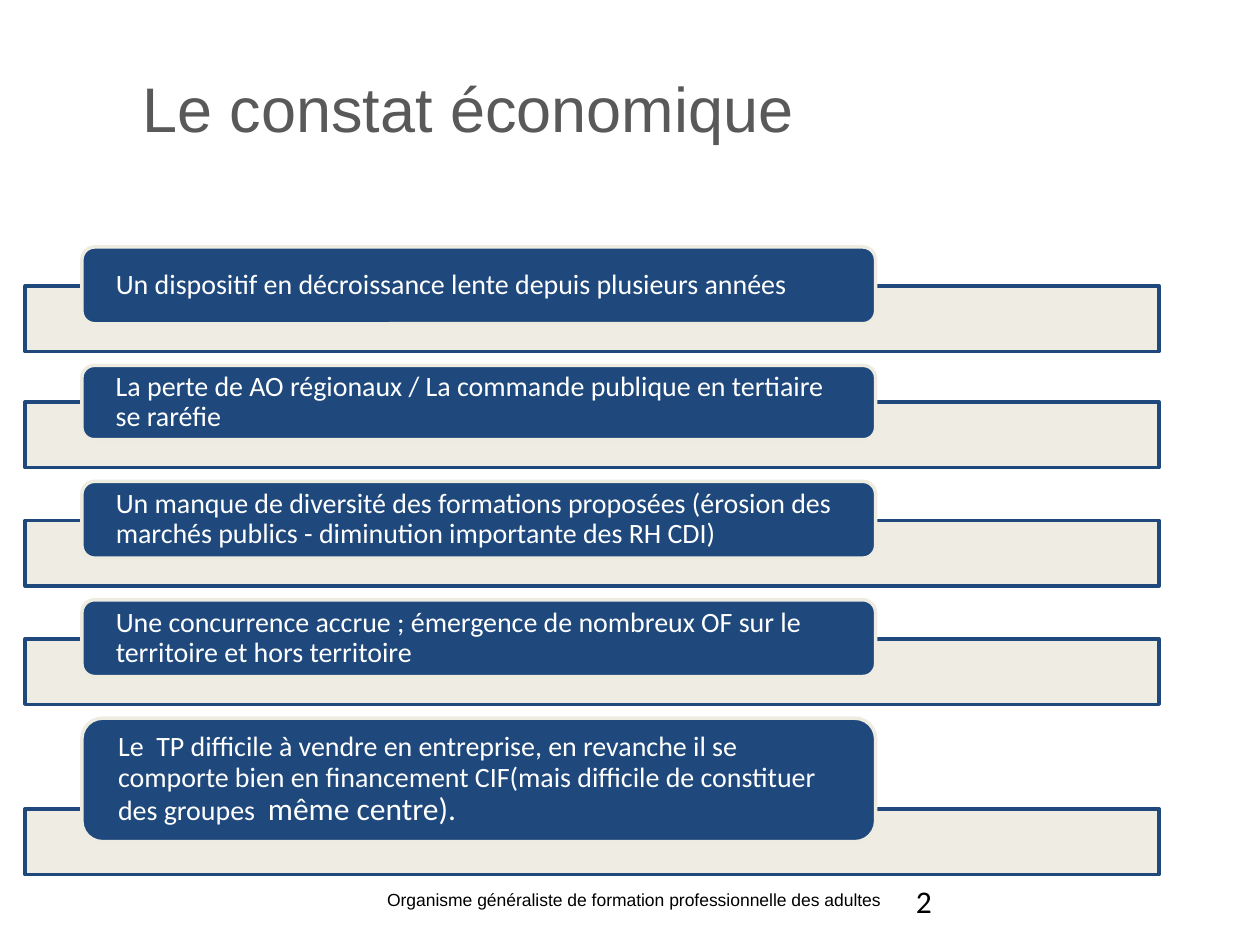
"""Build the slide on the economic findings, laid out on a grid of 100 columns by 75 rows."""
from dataclasses import dataclass

from lxml.etree import SubElement
from pptx import Presentation
from pptx.dml.color import RGBColor
from pptx.enum.shapes import MSO_SHAPE
from pptx.enum.text import MSO_ANCHOR, PP_ALIGN
from pptx.oxml.ns import qn
from pptx.util import Inches, Pt

NAVY = RGBColor(0x1F, 0x49, 0x7D)
CREAM = RGBColor(0xEE, 0xEC, 0xE1)
WHITE = RGBColor(0xFF, 0xFF, 0xFF)
GREY = RGBColor(0x59, 0x59, 0x59)
BLACK = RGBColor(0, 0, 0)

SLIDE_W, SLIDE_H = Inches(10), Inches(7.5)
COL, ROW = SLIDE_W / 100, SLIDE_H / 75
FIRST_ROW, BAR_ROWS, GAP_ROWS = 19.6, 5.2, 1.1


@dataclass(frozen=True)
class Span:
    text: str
    size: int = 16


@dataclass(frozen=True)
class Finding:
    spans: tuple[Span, ...]
    rows: float = 6.1
    overlap: float = 3


FINDINGS = (
    Finding((Span("Un dispositif en décroissance lente depuis plusieurs années"),)),
    Finding((Span("La perte de AO régionaux / La commande publique en tertiaire se raréfie"),),
            rows=5.9),
    Finding((Span("Un manque de diversité des formations proposées (érosion des marchés publics"
                  " - diminution importante des RH CDI)"),)),
    Finding((Span("Une concurrence accrue ; émergence de nombreux OF sur le territoire"
                  " et hors territoire"),)),
    Finding((Span("Le  TP difficile à vendre en entreprise, en revanche il se comporte bien en"
                  " financement CIF(mais difficile de constituer des groupes  "),
             Span("même centre).", 18)), rows=9.8, overlap=2.6),
)


def grid(col: float, row: float, cols: float, rows: float) -> tuple[int, int, int, int]:
    """Turn grid units into left, top, width and height."""
    return round(col * COL), round(row * ROW), round(cols * COL), round(rows * ROW)


def add_run(p, text: str, size: int, font: str, color: RGBColor) -> None:
    """Add one formatted run to a paragraph."""
    r = p.add_run()
    r.text = text
    r.font.size, r.font.name = Pt(size), font
    r.font.color.rgb = color


def add_panel(slide, kind: MSO_SHAPE, box: tuple, fill: RGBColor, line: RGBColor):
    """Add a flat outlined shape."""
    sp = slide.shapes.add_shape(kind, *box)
    sp.shadow.inherit = False
    sp.fill.solid()
    sp.fill.fore_color.rgb = fill
    sp.line.color.rgb = line
    sp.line.width = Pt(2)
    return sp


def add_finding(slide, finding: Finding, row: float) -> float:
    """Draw a bar with its label and return the row of the next label."""
    bar_row = row + finding.rows - finding.overlap
    bar = add_panel(slide, MSO_SHAPE.RECTANGLE, grid(2, bar_row, 90, BAR_ROWS), CREAM, NAVY)
    color = bar.fill._xPr.find(qn("a:solidFill"))[0]
    SubElement(color, qn("a:alpha"), val="90000")

    label = add_panel(slide, MSO_SHAPE.ROUNDED_RECTANGLE,
                      grid(6.5, row, 63, finding.rows), NAVY, CREAM)
    tf = label.text_frame
    tf.word_wrap = True
    tf.vertical_anchor = MSO_ANCHOR.MIDDLE
    tf.margin_left = tf.margin_right = Inches(0.24)
    tf.margin_top = tf.margin_bottom = 0
    p = tf.paragraphs[0]
    p.alignment = PP_ALIGN.LEFT
    p.line_spacing = 0.9
    for span in finding.spans:
        add_run(p, span.text, span.size, "Calibri", WHITE)
    return bar_row + BAR_ROWS + GAP_ROWS


def add_note(slide, box: tuple, text: str, size: int, font: str, align: PP_ALIGN) -> None:
    """Add a line of text at the foot of the slide."""
    tf = slide.shapes.add_textbox(*box).text_frame
    tf.word_wrap = True
    p = tf.paragraphs[0]
    p.alignment = align
    add_run(p, text, size, font, BLACK)


def add_title(slide, text: str) -> None:
    """Place and format the title placeholder."""
    sp = slide.shapes.title
    sp.left, sp.top, sp.width, sp.height = grid(3.9, 4.5, 66.5, 8)
    tf = sp.text_frame
    tf.vertical_anchor = MSO_ANCHOR.MIDDLE
    p = tf.paragraphs[0]
    p.alignment = PP_ALIGN.CENTER
    add_run(p, text, 36, "Arial", GREY)


def main() -> None:
    """Build and save the presentation."""
    prs = Presentation()
    prs.slide_width, prs.slide_height = SLIDE_W, SLIDE_H
    slide = prs.slides.add_slide(prs.slide_layouts[5])
    add_title(slide, "Le constat économique")
    add_note(slide, grid(2.1, 70.1, 96.4, 2.7),
             "Organisme généraliste de formation professionnelle des adultes",
             10, "Arial", PP_ALIGN.CENTER)
    add_note(slide, grid(71.7, 69.5, 23.3, 4), "2", 18, "Calibri", PP_ALIGN.LEFT)
    row = FIRST_ROW
    for finding in FINDINGS:
        row = add_finding(slide, finding, row)
    prs.save("out.pptx")


if __name__ == "__main__":
    main()
